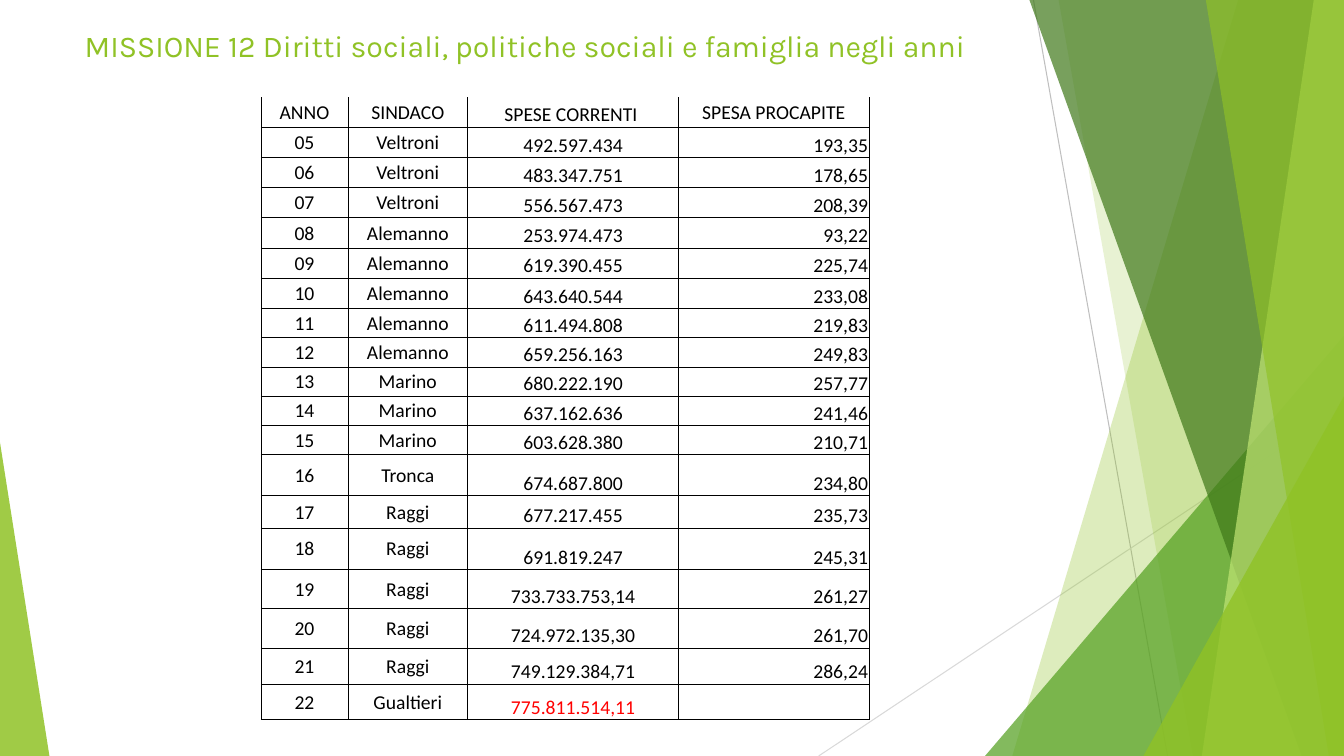
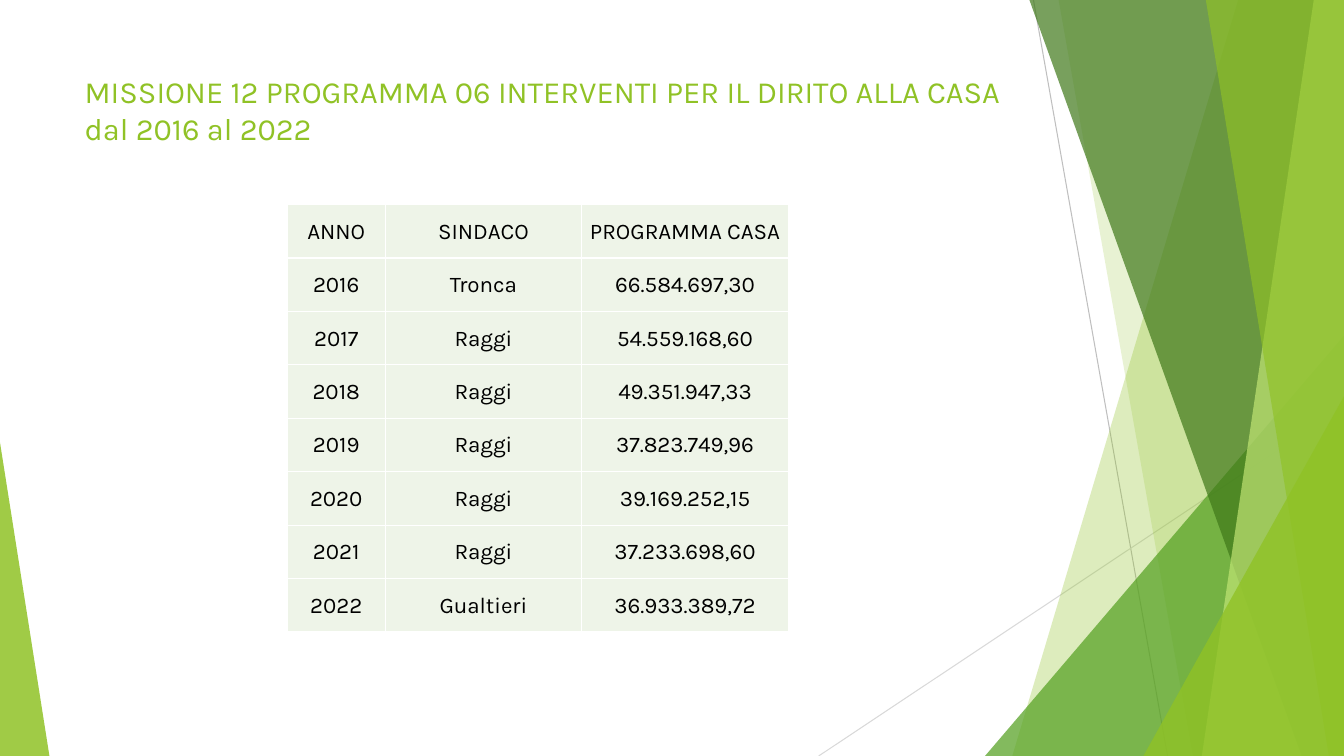
from lxml import etree
from pptx import Presentation
from pptx import util as u
from pptx.dml.color import RGBColor
from pptx.enum import shapes, text
from pptx.oxml import ns

PX = 9144
WIDTH, HEIGHT = 1333, 750

GREEN = RGBColor(0x90, 0xC2, 0x26)
LEAF = RGBColor(0x54, 0xA0, 0x21)
FOREST = RGBColor(0x3F, 0x78, 0x19)
LIME = RGBColor(0xC0, 0xE4, 0x74)
GREY = RGBColor(0xBF, 0xBF, 0xBF)
SILVER = RGBColor(0xD9, 0xD9, 0xD9)
MINT = RGBColor(0xEE, 0xF4, 0xE8)
BLACK = RGBColor(0, 0, 0)
WHITE = RGBColor(0xFF, 0xFF, 0xFF)
RED = RGBColor(0xFF, 0, 0)

LEFT, CENTER, RIGHT = text.PP_ALIGN.LEFT, text.PP_ALIGN.CENTER, text.PP_ALIGN.RIGHT
TOP, MIDDLE, BOTTOM = text.MSO_ANCHOR.TOP, text.MSO_ANCHOR.MIDDLE, text.MSO_ANCHOR.BOTTOM

RAYS = [
    ((1025, 0, 1158, HEIGHT), GREY),
    ((WIDTH, 403, 812, HEIGHT), SILVER),
]
FACETS = [
    ("band", (1228, 1004), GREEN, 30),
    ("band", (1050, 1183), GREEN, 20),
    ("triangle", (977, 333, 356, 417, 1), LEAF, 72),
    ("band", (1021, 1291), FOREST, 70),
    ("band", (1303, 1192), LIME, 70),
    ("band", (1196, 1318), GREEN, 65),
    ("triangle", (1134, 393, 199, 357, 1), GREEN, 80),
    ("triangle", (0, 439, 49, 311, 0), GREEN, 85),
]

SPENDING_ROWS = [
    ("ANNO", "SINDACO", "SPESE CORRENTI ", "SPESA PROCAPITE"),
    ("05", "Veltroni", "492.597.434", "193,35"),
    ("06", "Veltroni", "483.347.751", "178,65"),
    ("07", "Veltroni", "556.567.473", "208,39"),
    ("08", "Alemanno", "253.974.473", "93,22"),
    ("09", "Alemanno", "619.390.455", "225,74"),
    ("10", "Alemanno", "643.640.544", "233,08"),
    ("11", "Alemanno", "611.494.808", "219,83"),
    ("12", "Alemanno", "659.256.163", "249,83"),
    ("13", "Marino", "680.222.190", "257,77"),
    ("14", "Marino", "637.162.636", "241,46"),
    ("15", "Marino", "603.628.380", "210,71"),
    ("16", "Tronca", "674.687.800", "234,80"),
    ("17", "Raggi", "677.217.455", "235,73"),
    ("18", "Raggi", "691.819.247", "245,31"),
    ("19", "Raggi", "733.733.753,14", "261,27"),
    ("20", "Raggi", "724.972.135,30", "261,70"),
    ("21", "Raggi", "749.129.384,71", "286,24"),
    ("22", "Gualtieri", "775.811.514,11", ""),
]
HOUSING_ROWS = [
    ("ANNO", "SINDACO", "PROGRAMMA CASA"),
    ("2016", "Tronca", "66.584.697,30"),
    ("2017", "Raggi", "54.559.168,60"),
    ("2018", "Raggi", "49.351.947,33"),
    ("2019", "Raggi", "37.823.749,96"),
    ("2020", "Raggi", "39.169.252,15"),
    ("2021", "Raggi", "37.233.698,60"),
    ("2022", "Gualtieri", "36.933.389,72"),
]

PAGES = [
    {
        "title": "MISSIONE 12 Diritti sociali, politiche sociali e famiglia negli anni",
        "title_box": (74, 22, 925, 60),
        "title_size": 21.6,
        "rows": SPENDING_ROWS,
        "corner": (259, 97),
        "widths": [86, 119, 209, 189],
        "heights": [29] + [30] * 6 + [29] * 5 + [41, 32, 41, 39, 39, 36, 35],
        "font": ("Calibri", 14),
        "border": (BLACK, 0.5),
        "fill": None,
        "header_anchors": [MIDDLE, MIDDLE, BOTTOM, MIDDLE],
        "anchors": [MIDDLE, MIDDLE, BOTTOM, BOTTOM],
        "aligns": [CENTER, CENTER, CENTER, RIGHT],
        "highlights": {"775.811.514,11": RED},
    },
    {
        "title": "MISSIONE 12 PROGRAMMA 06 INTERVENTI PER IL DIRITO ALLA CASA dal 2016 al 2022",
        "title_box": (74, 67, 940, 144),
        "title_size": 22,
        "rows": HOUSING_ROWS,
        "corner": (285, 203),
        "widths": [97, 195, 205],
        "heights": [53] * len(HOUSING_ROWS),
        "font": ("Karla", 16),
        "border": (WHITE, 1),
        "fill": MINT,
        "header_anchors": [MIDDLE] * 3,
        "anchors": [MIDDLE] * 3,
        "aligns": [CENTER] * 3,
        "highlights": {},
    },
]


def emu(*lengths):
    return [length * PX for length in lengths]


def add_ray(page, ends, color):
    ray = page.shapes.add_connector(shapes.MSO_CONNECTOR.STRAIGHT, *emu(*ends))
    ray.line.color.rgb = color
    ray.line.width = u.Pt(0.75)
    etree.SubElement(ray.element.spPr, ns.qn("a:effectLst"))
    return ray


def add_facet(page, kind, geometry, color, opacity):
    if kind == "band":
        head, foot = geometry
        outline = page.shapes.build_freeform(head, 0, scale=PX)
        outline.add_line_segments([(WIDTH, 0), (WIDTH, HEIGHT), (foot, HEIGHT)], close=True)
        facet = outline.convert_to_shape()
    else:
        *frame, peak = geometry
        facet = page.shapes.add_shape(shapes.MSO_SHAPE.ISOSCELES_TRIANGLE, *emu(*frame))
        facet.adjustments[0] = peak
    facet.shadow.inherit = False
    facet.line.fill.background()
    facet.fill.solid()
    facet.fill.fore_color.rgb = color
    tint = facet.element.spPr.find(ns.qn("a:solidFill"))[0]
    etree.SubElement(tint, ns.qn("a:alpha"), val=str(opacity * 1000))
    return facet


def decorate_layout(layout, page):
    for holder in list(layout.placeholders):
        if holder.placeholder_format.type != shapes.PP_PLACEHOLDER.TITLE:
            holder.element.getparent().remove(holder.element)
    decor = [add_ray(page, *ray) for ray in RAYS]
    decor += [add_facet(page, *facet) for facet in FACETS]
    for position, shape in enumerate(decor, start=2):
        layout.shapes.element.insert(position, shape.element)


def set_title(page, content):
    title = page.shapes.title
    title.left, title.top, title.width, title.height = emu(*content["title_box"])
    frame = title.text_frame
    frame.text = content["title"]
    frame.word_wrap = True
    frame.auto_size = text.MSO_AUTO_SIZE.NONE
    frame.vertical_anchor = TOP
    para = frame.paragraphs[0]
    para.alignment = LEFT
    para.font.name = "Karla"
    para.font.size = u.Pt(content["title_size"])
    para.font.color.rgb = GREEN


def set_borders(cell, sides, color, points):
    properties = cell._tc.get_or_add_tcPr()
    for side in sides:
        edge = etree.SubElement(properties, ns.qn("a:ln" + side), w=str(u.Pt(points)))
        paint = etree.SubElement(edge, ns.qn("a:solidFill"))
        etree.SubElement(paint, ns.qn("a:srgbClr"), val=str(color))


def format_cell(cell, content, row, column):
    value = content["rows"][row][column]
    header = row == 0
    cell.text = value
    cell.margin_left = cell.margin_right = cell.margin_top = PX
    cell.margin_bottom = 0
    anchors = content["header_anchors"] if header else content["anchors"]
    cell.vertical_anchor = anchors[column]
    set_borders(cell, "LRB" if header else "LRTB", *content["border"])
    if content["fill"] is None:
        cell.fill.background()
    else:
        cell.fill.solid()
        cell.fill.fore_color.rgb = content["fill"]
    para = cell.text_frame.paragraphs[0]
    para.alignment = CENTER if header else content["aligns"][column]
    name, size = content["font"]
    para.font.name = name
    para.font.size = u.Pt(size)
    para.font.color.rgb = content["highlights"].get(value, BLACK)


def add_grid(page, content):
    widths, heights = content["widths"], content["heights"]
    frame = emu(*content["corner"], sum(widths), sum(heights))
    table = page.shapes.add_table(len(heights), len(widths), *frame).table
    table.first_row = table.horz_banding = False
    for column, width in zip(table.columns, emu(*widths)):
        column.width = width
    for row, height in zip(table.rows, emu(*heights)):
        row.height = height
    for row in range(len(heights)):
        for column in range(len(widths)):
            format_cell(table.cell(row, column), content, row, column)


def main():
    deck = Presentation()
    deck.slide_width, deck.slide_height = emu(WIDTH, HEIGHT)
    layout = deck.slide_layouts[5]
    pages = [deck.slides.add_slide(layout) for _ in PAGES]
    decorate_layout(layout, pages[0])
    for page, content in zip(pages, PAGES):
        set_title(page, content)
        add_grid(page, content)
    deck.save("out.pptx")


if __name__ == "__main__":
    main()
